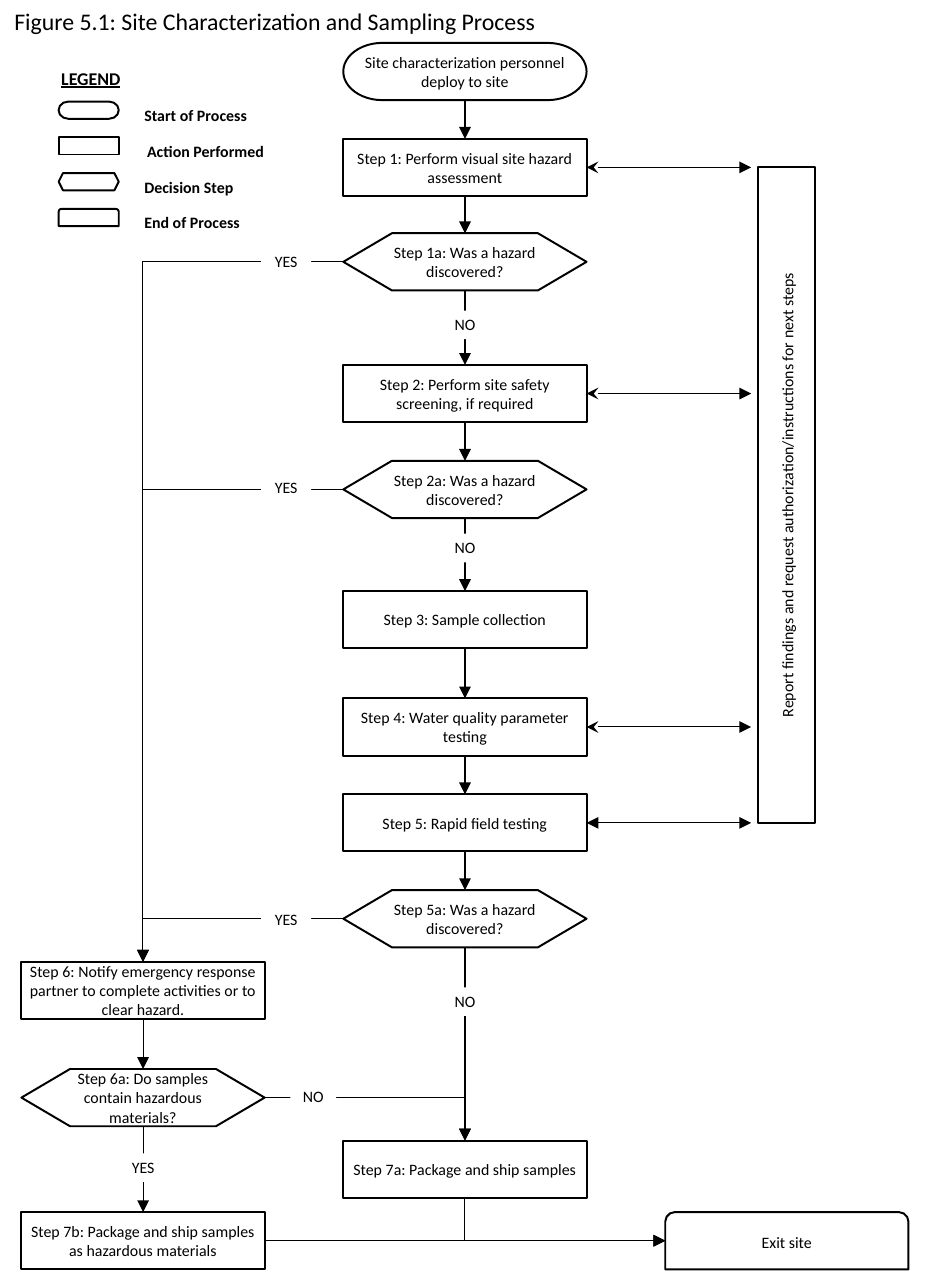
from dataclasses import dataclass

from lxml import etree
from pptx import Presentation
from pptx.dml.color import RGBColor
from pptx.enum import shapes, text
from pptx.oxml import ns
from pptx.util import Inches, Pt


@dataclass(frozen=True)
class Theme:
    ink: RGBColor = RGBColor(0, 0, 0)
    paper: RGBColor = RGBColor(255, 255, 255)
    font: str = "Calibri"
    title: int = 12
    heading: int = 9
    body: int = 8
    outline: float = 1
    link: float = 0.5


THEME = Theme()
KIND = shapes.MSO_SHAPE
START, ACTION = KIND.FLOWCHART_TERMINATOR, KIND.FLOWCHART_PROCESS
DECISION, END = KIND.FLOWCHART_PREPARATION, KIND.ROUND_2_SAME_RECTANGLE
TOP, LEFT, BOTTOM, RIGHT = range(4)
WIDTH, HEIGHT = 1.7, 0.4
SIDE_X, MAIN_X, EXIT_X = 1, 3.25, 5.5
REPORT_LENGTH, REPORT_END = 4.58, 5.25

STEPS = {
    "start": (START, MAIN_X, 0.3, "Site characterization personnel deploy to site"),
    "1": (ACTION, MAIN_X, 0.97, "Step 1: Perform visual site hazard assessment"),
    "1a": (DECISION, MAIN_X, 1.63, "Step 1a: Was a hazard discovered?"),
    "2": (ACTION, MAIN_X, 2.55, "Step 2: Perform site safety screening, if required"),
    "2a": (DECISION, MAIN_X, 3.22, "Step 2a: Was a hazard discovered?"),
    "3": (ACTION, MAIN_X, 4.13, "Step 3: Sample collection"),
    "4": (ACTION, MAIN_X, 4.88, "Step 4: Water quality parameter testing"),
    "5": (ACTION, MAIN_X, 5.55, "Step 5: Rapid field testing"),
    "5a": (DECISION, MAIN_X, 6.22, "Step 5a: Was a hazard discovered?"),
    "7a": (ACTION, MAIN_X, 7.97, "Step 7a: Package and ship samples"),
    "6": (ACTION, SIDE_X, 6.72, "Step 6: Notify emergency response partner to complete "
          "activities or to clear hazard."),
    "6a": (DECISION, SIDE_X, 7.47, "Step 6a: Do samples contain hazardous materials?"),
    "7b": (ACTION, SIDE_X, 8.47, "Step 7b: Package and ship samples as hazardous materials"),
    "exit": (END, EXIT_X, 8.47, "Exit site"),
}
MAIN_PATH = ["start", "1", "1a", "2", "2a", "3", "4", "5", "5a", "7a"]
SIDE_PATH = ["6", "6a", "7b"]
REPORTS = {"1": "stealth", "2": "stealth", "4": "stealth", "5": "triangle"}
LABELS = [
    ("YES", 2, 1.73), ("YES", 2, 3.31), ("YES", 2, 6.33), ("YES", SIDE_X, 8.06),
    ("NO", MAIN_X, 2.17), ("NO", MAIN_X, 3.73), ("NO", MAIN_X, 6.9), ("NO", 2.19, 7.56),
]
LEGEND = [
    (START, "Start of Process", 0.91),
    (KIND.RECTANGLE, "Action Performed", 0.93),
    (KIND.HEXAGON, "Decision Step", 0.91),
    (END, "End of Process", 0.91),
]


def write(box, words, size=THEME.body, align=text.PP_ALIGN.LEFT, insets=(0.1, 0.05),
          anchor=text.MSO_ANCHOR.TOP, fit=text.MSO_AUTO_SIZE.NONE, **font):
    across, down = map(Inches, insets)
    frame = box.text_frame
    layout = {"margin_left": across, "margin_right": across, "margin_top": down,
              "margin_bottom": down, "word_wrap": True, "auto_size": fit,
              "vertical_anchor": anchor}
    for name, value in layout.items():
        setattr(frame, name, value)
    para = frame.paragraphs[0]
    para.alignment = align
    span = para.add_run()
    span.text = words
    for name, value in {"name": THEME.font, "size": Pt(size), **font}.items():
        setattr(span.font, name, value)
    span.font.color.rgb = THEME.ink


def add_box(page, kind, left, top, width, height, outlined=True):
    box = page.shapes.add_shape(kind, *map(Inches, (left, top, width, height)))
    box.shadow.inherit = False
    box.fill.solid()
    box.fill.fore_color.rgb = THEME.paper
    if outlined:
        box.line.color.rgb = THEME.ink
        box.line.width = Pt(THEME.outline)
    else:
        box.line.fill.background()
    return box


def add_step(page, kind, center, top, words, width=WIDTH):
    box = add_box(page, kind, center - width / 2, top, width, HEIGHT)
    write(box, words, align=text.PP_ALIGN.CENTER, anchor=text.MSO_ANCHOR.MIDDLE,
          insets=(0.04 if kind == ACTION else 0, 0))
    return box


def add_label(page, words, center, top):
    width = 0.35 if words == "YES" else 0.32
    box = add_box(page, KIND.RECTANGLE, center - width / 2, top, width, 0.2, outlined=False)
    write(box, words, align=text.PP_ALIGN.CENTER, insets=(0.07, 0.03),
          fit=text.MSO_AUTO_SIZE.SHAPE_TO_FIT_TEXT)


def add_note(page, words, left, top, width, height, **font):
    box = page.shapes.add_textbox(*map(Inches, (left, top, width, height)))
    write(box, words, fit=text.MSO_AUTO_SIZE.SHAPE_TO_FIT_TEXT, bold=True, **font)


def side(box, site):
    across = {LEFT: 0, RIGHT: box.width}.get(site, box.width // 2)
    down = {TOP: 0, BOTTOM: box.height}.get(site, box.height // 2)
    return box.left + across, box.top + down


def add_line(page, kind, start, end, head=None, tail="triangle"):
    line = page.shapes.add_connector(kind, *start, *end)
    line.line.color.rgb = THEME.ink
    line.line.width = Pt(THEME.link)
    stroke = line.line._get_or_add_ln()
    for tag, arrow in (("a:headEnd", head), ("a:tailEnd", tail)):
        if arrow:
            etree.SubElement(stroke, ns.qn(tag), type=arrow)
    etree.SubElement(line._element.spPr, ns.qn("a:effectLst"))
    return line


def add_straight(page, start, end):
    line = add_line(page, shapes.MSO_CONNECTOR.STRAIGHT, side(*start), side(*end))
    line.begin_connect(*start)
    if end[0].auto_shape_type != END:
        line.end_connect(*end)


def add_bend(page, start, end, **arrows):
    line = add_line(page, shapes.MSO_CONNECTOR.ELBOW, side(*start), side(*end), **arrows)
    line._element.spPr.find(ns.qn("a:prstGeom")).set("prst", "bentConnector2")


def add_report(page, steps):
    bar = add_step(page, ACTION, EXIT_X, 3.26,
                   "Report findings and request authorization/instructions for next steps",
                   width=REPORT_LENGTH)
    bar.rotation = 270
    for key, head in REPORTS.items():
        start = side(steps[key], RIGHT)
        line = add_line(page, shapes.MSO_CONNECTOR.STRAIGHT, start,
                        (Inches(REPORT_END), start[1]), head=head)
        line.begin_connect(steps[key], RIGHT)


def add_links(page, steps):
    for chain in (MAIN_PATH, SIDE_PATH):
        for upper, lower in zip(chain, chain[1:]):
            add_straight(page, (steps[upper], BOTTOM), (steps[lower], TOP))
    add_straight(page, (steps["7b"], RIGHT), (steps["exit"], LEFT))
    for key in ("1a", "2a", "5a"):
        add_bend(page, (steps[key], LEFT), (steps["6"], TOP))
    add_bend(page, (steps["6a"], RIGHT), (steps["7a"], TOP))
    add_bend(page, (steps["exit"], LEFT), (steps["7a"], BOTTOM), head="triangle", tail=None)


def add_legend(page):
    add_note(page, "LEGEND", 0.33, 0.42, 1.03, 0.25, size=THEME.heading, underline=True)
    for row, (kind, words, left) in enumerate(LEGEND):
        top = 0.71 + 0.25 * row
        add_box(page, kind, 0.41, top, 0.42, 0.12)
        add_note(page, words, left, top - 0.02, 1.28, 0.24)


def add_title(page, words):
    title = page.shapes.title
    place = {"left": 0, "top": 0, "width": 6.5, "height": 0.3}
    for name, value in place.items():
        setattr(title, name, Inches(value))
    write(title, words, size=THEME.title)


def main():
    deck = Presentation()
    deck.slide_width, deck.slide_height = Inches(6.5), Inches(9)
    page = deck.slides.add_slide(deck.slide_layouts.get_by_name("Title Only"))
    add_title(page, "Figure 5.1: Site Characterization and Sampling Process")
    add_legend(page)
    steps = {key: add_step(page, *step) for key, step in STEPS.items()}
    add_links(page, steps)
    add_report(page, steps)
    for label in LABELS:
        add_label(page, *label)
    deck.save("out.pptx")


if __name__ == "__main__":
    main()
